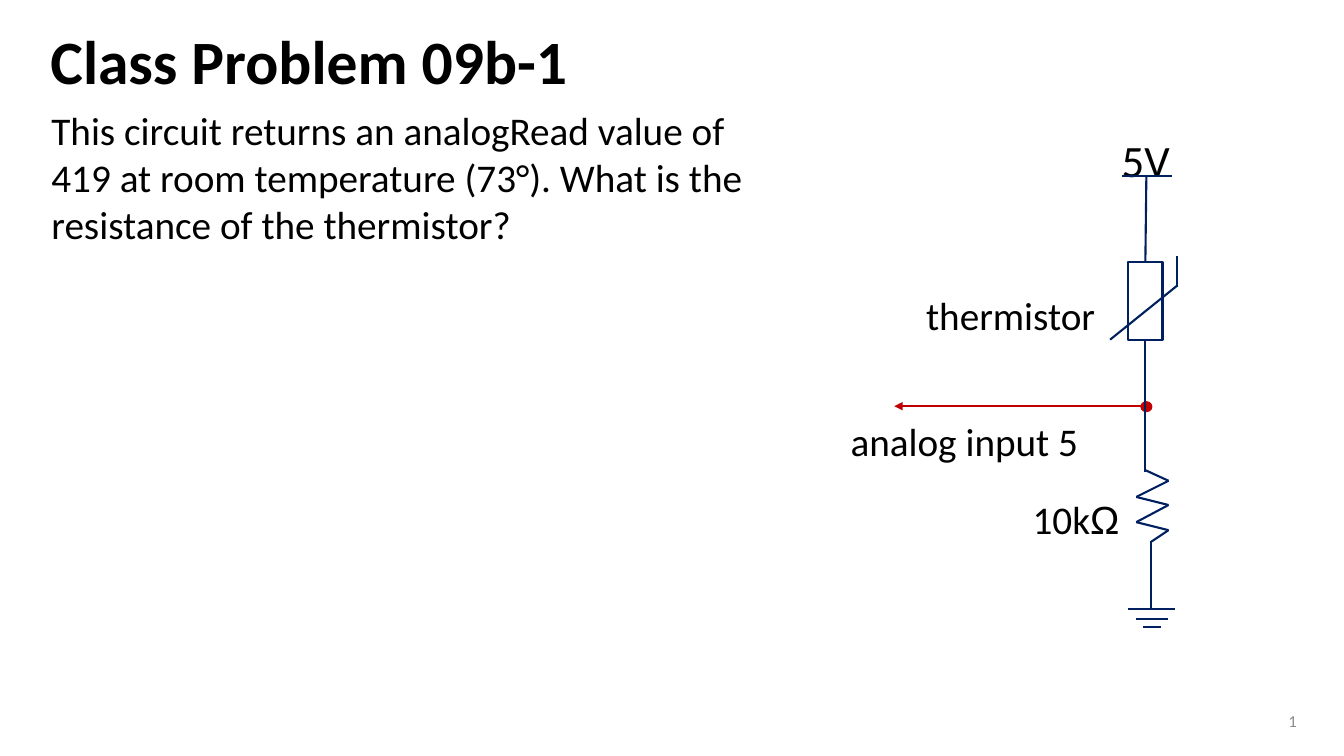
"""Build the thermistor voltage divider class problem slide."""
from itertools import pairwise

from lxml import etree
from pptx import Presentation
from pptx import util as u
from pptx.dml.color import RGBColor
from pptx.enum import shapes, text
from pptx.oxml.ns import qn

COLORS = {"ink": "000000", "navy": "002060", "red": "C00000", "gray": "8C8C8C"}
COLUMNS, ROWS = 1333, 750
WIDTH, HEIGHT = u.Inches(13.33), u.Inches(7.5)

TITLE = ("Class Problem 09b-1", (40, 23, 1256, 82))
QUESTION = ("This circuit returns an analogRead value of 419 at room temperature "
            "(73°). What is the resistance of the thermistor?", (41, 100, 715, 151))
PAGE_NUMBER = ("1", (942, 695, 354, 40))
LABELS = [
    ([("5V", "Calibri")], (1080, 119, 113, 70), 32, "CENTER"),
    ([("analog input 5", "Calibri")], (820, 402, 259, 56), 28, "RIGHT"),
    ([("thermistor", "Calibri")], (886, 277, 210, 48), 28, "RIGHT"),
    ([("10k", "Calibri"), ("Ω", "Arial")], (965, 479, 155, 53), 28, "RIGHT"),
]

SUPPLY_BAR = [(1113, 175), (1162, 175)]
RESISTOR_ROWS = [477, 493, 501, 518, 526]
RESISTOR_SIDES = [1159, 1127]
RESISTOR = [(1135, 466),
            *((RESISTOR_SIDES[i % 2], row) for i, row in enumerate(RESISTOR_ROWS)),
            (1141, 538)]
GROUND_WIRE = [(1142, 537), (1142, 604)]
GROUND_BARS = [[(1119, 604), (1165, 604)], [(1127, 614), (1158, 614)],
               [(1134, 622), (1152, 622)]]
SENSOR_MARK = [[(1168, 283), (1101, 337)], [(1167, 254), (1167, 285)]]
SENSOR_BODY = (1119, 260, 34, 77)
JUNCTION = (1131, 398, 12, 11)
SIGNAL = [(1133, 403), (887, 403)]
SUPPLY_WIRE = [(1137, 175), (1136, 260)]
JUNCTION_WIRE = [(1136, 337), (1136, 468)]


def place(column, row):
    return round(WIDTH * column / COLUMNS), round(HEIGHT * row / ROWS)


def frame(area):
    return (*place(*area[:2]), *place(*area[2:]))


def color(name):
    return RGBColor.from_string(COLORS[name])


def style(font, size, name="ink", face="Calibri", bold=False):
    font.name, font.size, font.bold = face, u.Pt(size), bold
    font.color.rgb = color(name)


def fill_placeholder(holder, words, area, size, bold, anchor, spacing):
    holder.left, holder.top, holder.width, holder.height = frame(area)
    body = holder.text_frame
    body.text = words
    body.word_wrap = True
    body.auto_size = text.MSO_AUTO_SIZE.NONE
    body.vertical_anchor = anchor
    para = body.paragraphs[0]
    properties = para._p.get_or_add_pPr()
    properties.set("marL", "0")
    properties.set("indent", "0")
    etree.SubElement(properties, qn("a:buNone"))
    para.alignment = text.PP_ALIGN.LEFT
    para.line_spacing = spacing
    para.space_before = u.Pt(0)
    style(para.runs[0].font, size, bold=bold)


def add_label(page, spans, area, size, align, name="ink"):
    box = page.shapes.add_textbox(*frame(area))
    box.text_frame.word_wrap = True
    para = box.text_frame.paragraphs[0]
    para.alignment = text.PP_ALIGN[align]
    for words, face in spans:
        span = para.add_run()
        span.text = words
        style(span.font, size, name, face)
    return box


def add_path(page, points, name="navy"):
    for start, end in pairwise(points):
        line = page.shapes.add_connector(
            shapes.MSO_CONNECTOR.STRAIGHT, *place(*start), *place(*end))
        line.line.color.rgb = color(name)
        line.line.width = u.Pt(1.5)
        etree.SubElement(line._element.spPr, qn("a:effectLst"))
    return line


def add_part(page, kind, area):
    part = page.shapes.add_shape(kind, *frame(area))
    part.shadow.inherit = False
    return part


def main():
    deck = Presentation()
    deck.slide_width, deck.slide_height = WIDTH, HEIGHT
    page = deck.slides.add_slide(deck.slide_layouts[1])
    fill_placeholder(page.shapes.title, *TITLE, 44, True, text.MSO_ANCHOR.MIDDLE, 0.9)
    fill_placeholder(page.placeholders[1], *QUESTION, 28, False, text.MSO_ANCHOR.TOP, 1.0)

    words, area = PAGE_NUMBER
    number = add_label(page, [(words, "Calibri")], area, 12, "RIGHT", "gray")
    number.text_frame.vertical_anchor = text.MSO_ANCHOR.MIDDLE

    for label in LABELS:
        box = add_label(page, *label)
        para = box.text_frame.paragraphs[0]
        para.line_spacing = 1.15
        para.space_after = u.Pt(10)

    for points in [SUPPLY_BAR, RESISTOR, GROUND_WIRE, *GROUND_BARS]:
        add_path(page, points)

    dot = add_part(page, shapes.MSO_SHAPE.OVAL, JUNCTION)
    dot.fill.solid()
    dot.fill.fore_color.rgb = color("red")
    dot.line.fill.background()
    signal = add_path(page, SIGNAL, "red")
    etree.SubElement(signal.line._get_or_add_ln(), qn("a:tailEnd"), type="triangle")

    sensor = add_part(page, shapes.MSO_SHAPE.RECTANGLE, SENSOR_BODY)
    sensor.fill.background()
    sensor.line.color.rgb = color("navy")
    sensor.line.width = u.Pt(1.5)
    for points in SENSOR_MARK:
        add_path(page, points)
    add_path(page, JUNCTION_WIRE).begin_connect(sensor, 2)
    add_path(page, SUPPLY_WIRE).end_connect(sensor, 0)

    deck.save("out.pptx")


if __name__ == "__main__":
    main()
